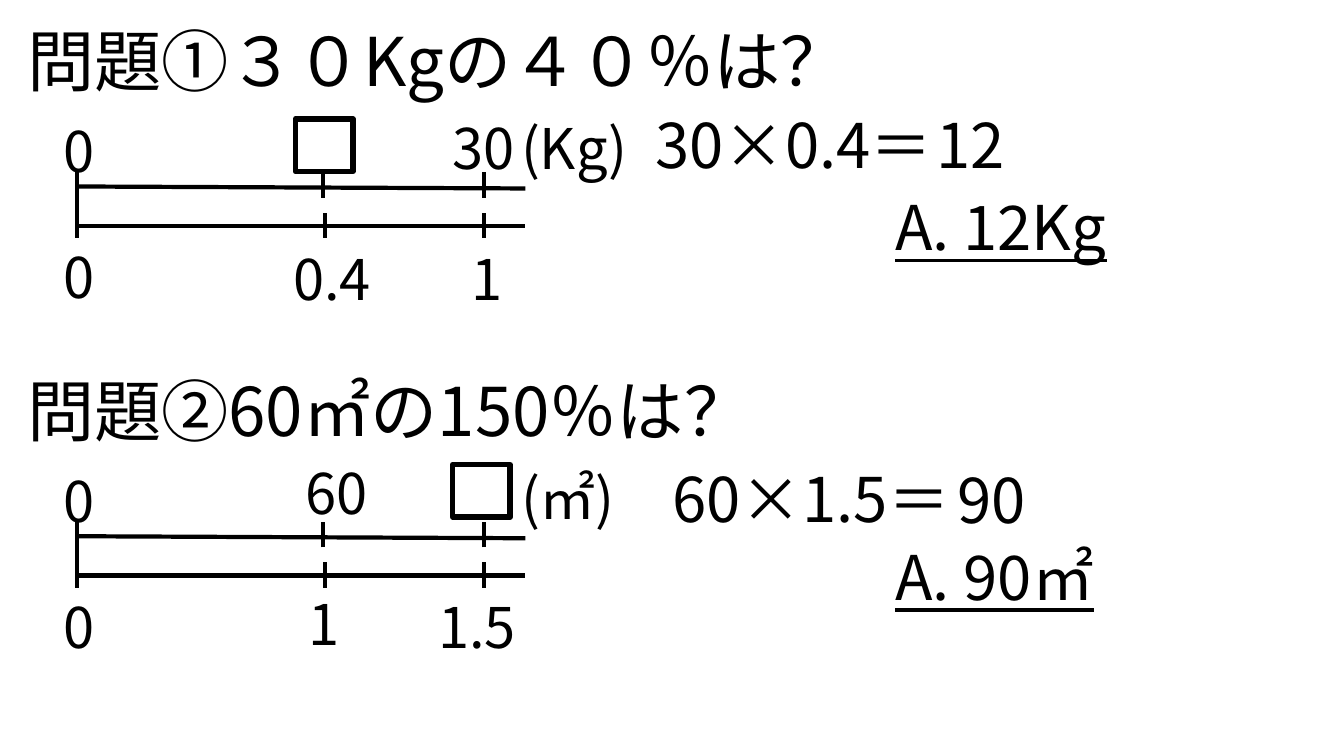
from lxml import etree
from pptx import Presentation
from pptx.dml.color import RGBColor
from pptx.enum.shapes import MSO_CONNECTOR, MSO_SHAPE
from pptx.enum.text import MSO_AUTO_SIZE
from pptx.oxml.ns import qn
from pptx.util import Inches, Pt

STRAIGHT = MSO_CONNECTOR.STRAIGHT
RECTANGLE = MSO_SHAPE.RECTANGLE
GROW = MSO_AUTO_SIZE.SHAPE_TO_FIT_TEXT

FONT = "Noto Sans CJK JP"
COLORS = {"ink": "000000"}
QUESTION_SIZE, LABEL_SIZE, WORK_SIZE = 48, 40, 44
HEIGHTS = {QUESTION_SIZE: 0.91, LABEL_SIZE: 0.77, WORK_SIZE: 0.84}

# Each text is (wording, left, drop below the problem's top, width), in inches.
PROBLEMS = [
    {
        "question": "問題①３０Kgの４０％は？",
        "labels": [("0", 0.53, 0.97, 0.43), ("30", 4.39, 0.94, 0.82),
                   ("(Kg)", 5.07, 0.94, 1.6), ("0", 0.53, 2.22, 0.43),
                   ("0.4", 2.81, 2.24, 1.04), ("1", 4.58, 2.24, 0.43)],
        "unknown": (2.93, 1.04),
        "work": [("30×0.4＝", 6.4, 0.87, 3.27), ("12", 9.19, 0.87, 1.4)],
        "answer": ("A. 12Kg", 8.78, 1.69, 2.37),
    },
    {
        "question": "問題②60㎡の150％は？",
        "labels": [("0", 0.53, 0.97, 0.43), ("60", 2.93, 0.89, 0.92),
                   ("(㎡)", 5.07, 0.94, 1.6), ("0", 0.53, 2.22, 0.43),
                   ("1", 2.96, 2.19, 0.43), ("1.5", 4.25, 2.22, 1.16)],
        "unknown": (4.49, 1.0),
        "work": [("60×1.5＝", 6.57, 0.91, 3.23), ("90", 9.4, 0.92, 1.4)],
        "answer": ("A. 90㎡", 8.78, 1.69, 3.23),
    },
]
FIRST_TOP, PROBLEM_PITCH = 0.14, 3.47
QUESTION_LEFT, QUESTION_WIDTH = 0.17, 13
UNKNOWN_WIDTH, UNKNOWN_HEIGHT = 0.57, 0.52

# Double number line: (x1, y1, x2, y2), y measured from the problem's top.
SCALE_START, SCALE_END, WHOLE = 0.77, 5.21, 4.8
UPPER_TICK, LOWER_TICK, TICK = 1.57, 1.97, 0.25
NUMBER_LINES = [
    (SCALE_START, 1.71, SCALE_END, 1.73),
    (SCALE_START, 2.1, SCALE_END, 2.1),
    (0.76, LOWER_TICK + TICK, 0.76, UPPER_TICK),
] + [
    (x, top + TICK, x, top)
    for top, middle in ((UPPER_TICK, 3.2), (LOWER_TICK, 3.22))
    for x in (middle, WHOLE)
]

prs = Presentation()
prs.slide_width, prs.slide_height = Inches(13.33), Inches(7.5)
slide = prs.slides.add_slide(prs.slide_layouts[6])
ink = RGBColor.from_string(COLORS["ink"])


def write(wording, left, top, width, size, underline=None):
    box = slide.shapes.add_textbox(
        Inches(left), Inches(top), Inches(width), Inches(HEIGHTS[size]))
    frame = box.text_frame
    frame.word_wrap = True
    frame.auto_size = GROW
    run = frame.paragraphs[0].add_run()
    run.text = wording
    font = run.font
    font.size, font.name, font.underline = Pt(size), FONT, underline
    font.color.rgb = ink
    east_asian = etree.SubElement(run._r.get_or_add_rPr(), qn("a:ea"))
    east_asian.set("typeface", FONT)


def draw_line(x1, y1, x2, y2):
    line = slide.shapes.add_connector(
        STRAIGHT, Inches(x1), Inches(y1), Inches(x2), Inches(y2))
    line.line.color.rgb = ink
    line.line.width = Pt(3)
    etree.SubElement(line._element.spPr, qn("a:effectLst"))


def draw_unknown(left, top):
    square = slide.shapes.add_shape(
        RECTANGLE, Inches(left), Inches(top),
        Inches(UNKNOWN_WIDTH), Inches(UNKNOWN_HEIGHT))
    square.shadow.inherit = False
    square.fill.background()
    square.line.color.rgb = ink
    square.line.width = Pt(4)


for index, problem in enumerate(PROBLEMS):
    top = FIRST_TOP + index * PROBLEM_PITCH
    write(problem["question"], QUESTION_LEFT, top, QUESTION_WIDTH, QUESTION_SIZE)
    for x1, y1, x2, y2 in NUMBER_LINES:
        draw_line(x1, top + y1, x2, top + y2)
    for wording, left, drop, width in problem["labels"]:
        write(wording, left, top + drop, width, LABEL_SIZE)
    left, drop = problem["unknown"]
    draw_unknown(left, top + drop)
    for wording, left, drop, width in problem["work"]:
        write(wording, left, top + drop, width, WORK_SIZE)
    wording, left, drop, width = problem["answer"]
    write(wording, left, top + drop, width, WORK_SIZE, underline=True)

prs.save("out.pptx")
